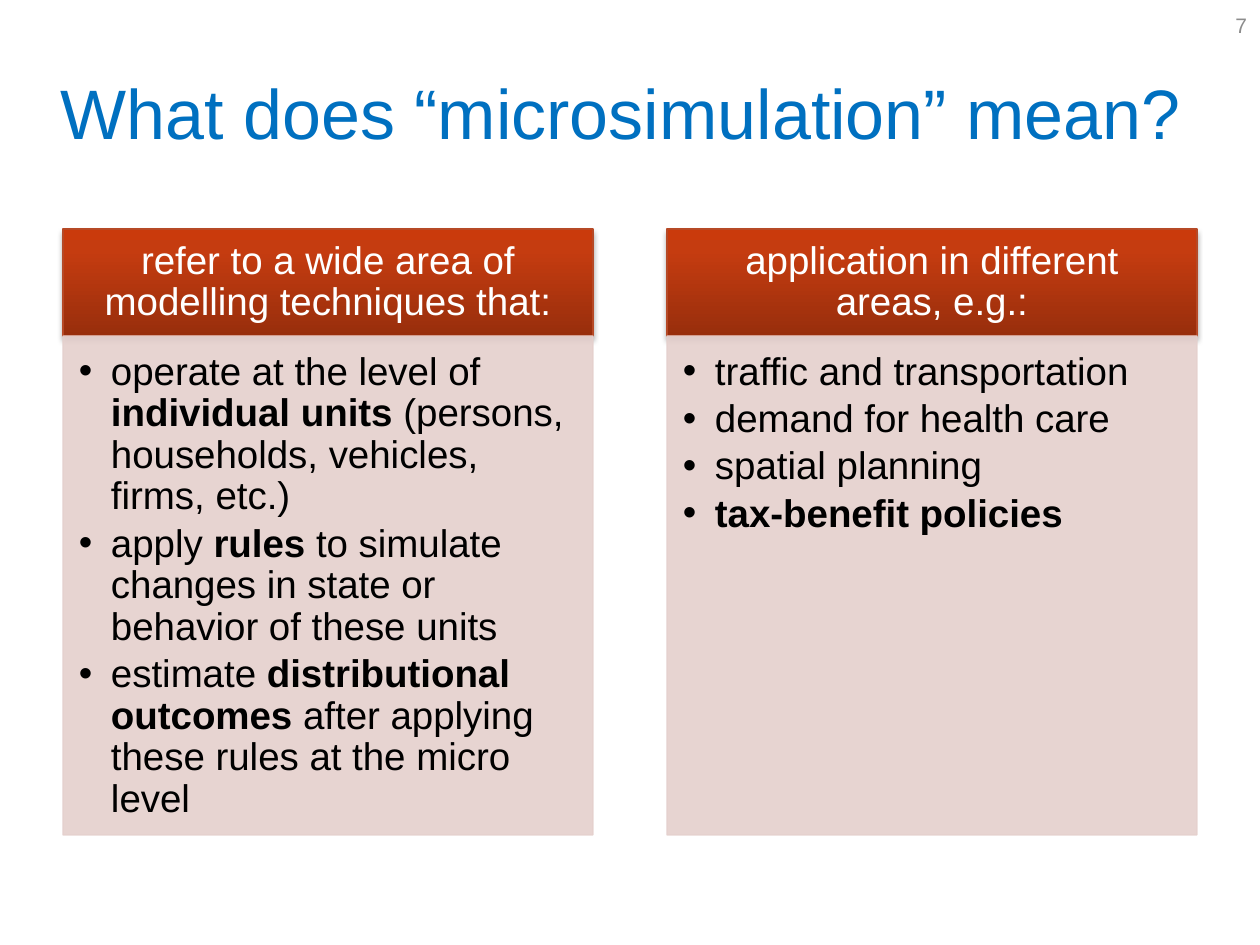
import pptx
import pptx.dml.color
import pptx.enum.shapes
import pptx.enum.text
import pptx.oxml
import pptx.oxml.ns
import pptx.util
from lxml import etree

PX = 914400 / 126
COLORS = {
    "title": "0070C0",
    "number": "8C8C8C",
    "header_line": "B64926",
    "header_text": "FFFFFF",
    "panel": "E5D0CD",
    "body": "000000",
    "shadow": "000000",
}
HEADER_STOPS = [(0, "982E0C"), (80, "C53C10"), (100, "CA3A0C")]
ALIGN = pptx.enum.text.PP_ALIGN
ANCHOR = pptx.enum.text.MSO_ANCHOR


def px(value):
    return pptx.util.Emu(round(value * PX))


def rgb(name):
    return pptx.dml.color.RGBColor.from_string(COLORS[name])


def add_xml(parent, tag, **attributes):
    names = {key: str(value) for key, value in attributes.items()}
    return etree.SubElement(parent, pptx.oxml.ns.qn(tag), names)


class SlideBuilder:
    font_name = "Arial"

    def __init__(self, slide):
        self.slide = slide

    def fill_text(self, shape, paragraphs, color, size, margins, anchor, bullets=False, **formats):
        frame = shape.text_frame
        sides = ("margin_left", "margin_top", "margin_right", "margin_bottom")
        settings = dict(zip(sides, map(px, margins)), word_wrap=True, vertical_anchor=anchor)
        for key, value in settings.items():
            setattr(frame, key, value)
        for index, runs in enumerate(paragraphs):
            paragraph = frame.add_paragraph() if index else frame.paragraphs[0]
            if bullets:
                self.add_bullet(paragraph)
            for key, value in formats.items():
                setattr(paragraph, key, value)
            for text, bold in runs:
                run = paragraph.add_run()
                run.text = text
                font = {"name": self.font_name, "size": pptx.util.Pt(size), "bold": bold}
                for key, value in font.items():
                    setattr(run.font, key, value)
                run.font.color.rgb = rgb(color)

    def add_bullet(self, paragraph):
        properties = paragraph._p.get_or_add_pPr()
        indent = px(32)
        properties.set("marL", str(indent))
        properties.set("indent", str(-indent))
        add_xml(properties, "a:buFont", typeface=self.font_name)
        add_xml(properties, "a:buChar", char="•")

    def text(self, box, text, color, size, **formats):
        shape = self.slide.shapes.add_textbox(*map(px, box))
        self.fill_text(shape, [[(text, False)]], color, size, (13, 6, 13, 6),
                       ANCHOR.MIDDLE, **formats)

    def rectangle(self, box, line):
        shape = self.slide.shapes.add_shape(
            pptx.enum.shapes.MSO_SHAPE.RECTANGLE, *map(px, box))
        shape.shadow.inherit = False
        shape.line.color.rgb = rgb(line)
        shape.line.width = pptx.util.Pt(0.75)
        return shape

    def header(self, box, text):
        shape = self.rectangle(box, "header_line")
        shape.fill.gradient()
        properties = shape.element.spPr
        gradient = properties.find(pptx.oxml.ns.qn("a:gradFill"))
        for child in list(gradient):
            gradient.remove(child)
        stops = add_xml(gradient, "a:gsLst")
        for position, color in HEADER_STOPS:
            add_xml(add_xml(stops, "a:gs", pos=position * 1000), "a:srgbClr", val=color)
        add_xml(gradient, "a:lin", ang=270 * 60000, scaled=0)
        effects = properties.find(pptx.oxml.ns.qn("a:effectLst"))
        shadow = add_xml(effects, "a:outerShdw", blurRad=pptx.util.Pt(3.1),
                         dist=pptx.util.Pt(1.8), dir=90 * 60000, rotWithShape=0)
        add_xml(add_xml(shadow, "a:srgbClr", val=COLORS["shadow"]), "a:alpha", val=35000)
        self.fill_text(shape, [[(text, False)]], "header_text", 22, (21, 13, 21, 13),
                       ANCHOR.MIDDLE, alignment=ALIGN.CENTER, line_spacing=0.9)

    def panel(self, box, items):
        shape = self.rectangle(box, "panel")
        shape.fill.solid()
        shape.fill.fore_color.rgb = rgb("panel")
        for color in list(shape.element.spPr.iter(pptx.oxml.ns.qn("a:srgbClr"))):
            add_xml(color, "a:alpha", val=90000)
        self.fill_text(shape, items, "body", 22, (16, 16, 21, 24), ANCHOR.TOP, bullets=True,
                       alignment=ALIGN.LEFT, line_spacing=0.9, space_after=pptx.util.Pt(3.3))


COLUMNS = [
    ("refer to a wide area of modelling techniques that:", [
        [("operate at the level of ", False), ("individual units ", True),
         ("(persons, households, vehicles, firms, etc.)", False)],
        [("apply ", False), ("rules", True),
         (" to simulate changes in state or behavior of these units", False)],
        [("estimate ", False), ("distributional outcomes ", True),
         ("after applying these rules at the micro level", False)],
    ]),
    ("application in different areas, e.g.:", [
        [("traffic and transportation", False)],
        [("demand for health care", False)],
        [("spatial planning", False)],
        [("tax-benefit policies", True)],
    ]),
]


def main():
    presentation = pptx.Presentation()
    presentation.slide_width = px(1260)
    presentation.slide_height = px(945)
    slide = presentation.slides.add_slide(presentation.slide_layouts[6])
    builder = SlideBuilder(slide)
    builder.text((44, 38, 1153, 157), "What does “microsimulation” mean?", "title", 40,
                 alignment=ALIGN.CENTER, line_spacing=0.9)
    builder.text((966, 0, 294, 50), "7", "number", 12, alignment=ALIGN.RIGHT)
    left, top, width, gap = 63, 229, 530, 74
    header_height, panel_height = 107, 499
    for index, (heading, items) in enumerate(COLUMNS):
        x = left + index * (width + gap)
        builder.header((x, top, width, header_height), heading)
        builder.panel((x, top + header_height, width, panel_height), items)
    presentation.save("out.pptx")


if __name__ == "__main__":
    main()
